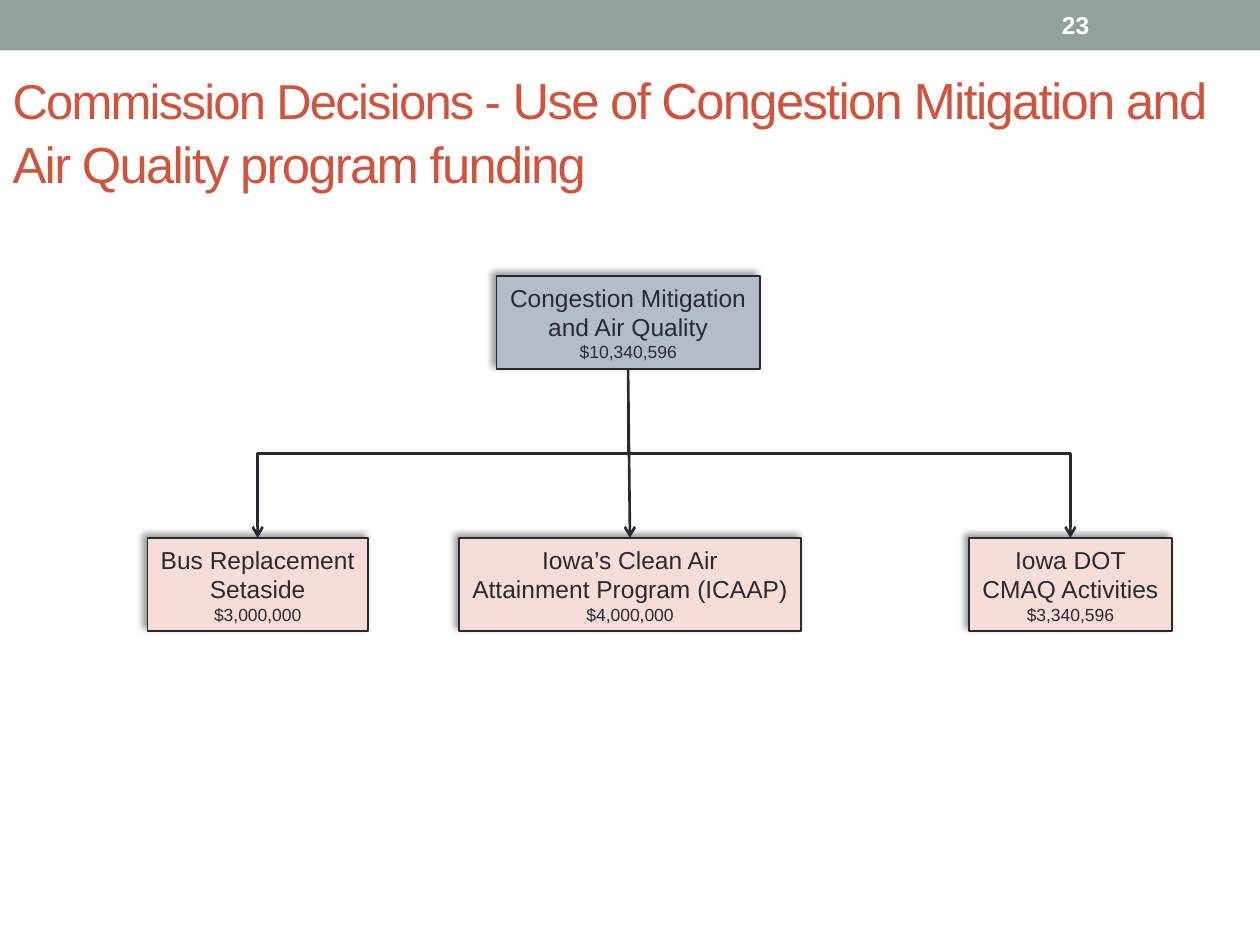
from lxml.etree import SubElement
from pptx import Presentation
from pptx.dml.color import RGBColor
from pptx.enum.shapes import MSO_CONNECTOR as Connector, MSO_SHAPE as Shape
from pptx.enum.text import MSO_ANCHOR as Anchor, MSO_AUTO_SIZE as AutoSize, PP_ALIGN as Align
from pptx.oxml.ns import qn
from pptx.util import Inches, Pt

SAGE = RGBColor(0x93, 0xA2, 0x99)
RUST = RGBColor(0xD2, 0x53, 0x3C)
INK = RGBColor(0x29, 0x29, 0x34)
STEEL = RGBColor(0xB3, 0xBD, 0xC8)
BLUSH = RGBColor(0xF6, 0xDD, 0xD8)
WHITE = RGBColor(0xFF, 0xFF, 0xFF)
FONT = "Arial"
BOX_HEIGHT = 0.74
BOTTOM_SITE, TOP_SITE = 2, 0


def style_font(font, size, color, bold=False):
    font.name, font.size, font.bold = FONT, Pt(size), bold
    font.color.rgb = color


def add_banner(slide, left, top, width, height, number):
    banner = slide.shapes.add_shape(
        Shape.RECTANGLE, Inches(left), Inches(top), Inches(width), Inches(height))
    banner.shadow.inherit = False
    banner.fill.solid()
    banner.fill.fore_color.rgb = SAGE
    banner.line.fill.background()

    number_box = slide.shapes.add_textbox(
        Inches(left + width - 1.67), Inches(top + 0.02), Inches(1.17), Inches(height - 0.04))
    frame = number_box.text_frame
    frame.word_wrap = True
    frame.vertical_anchor = Anchor.MIDDLE
    frame.text = number
    style_font(frame.paragraphs[0].runs[0].font, 14, WHITE, bold=True)


def add_title(slide, left, top, width, height, parts):
    """Fill the title with (text, size) parts."""
    title = slide.shapes.title
    title.left, title.top = Inches(left), Inches(top)
    title.width, title.height = Inches(width), Inches(height)
    frame = title.text_frame
    frame.auto_size = AutoSize.NONE
    frame.vertical_anchor = Anchor.TOP
    paragraph = frame.paragraphs[0]
    paragraph.alignment = Align.LEFT
    paragraph.line_spacing = 1.05
    for text, size in parts:
        run = paragraph.add_run()
        run.text = text
        style_font(run.font, size, RUST)
        run.font._element.set("spc", "-100")


def add_soft_shadow(shape):
    shape.shadow.inherit = False
    effects = shape._element.spPr.find(qn("a:effectLst"))
    shadow = SubElement(effects, qn("a:outerShdw"), blurRad=str(Pt(4)), dist=str(Pt(3)),
                        dir=str(225 * 60000), algn="br", rotWithShape="0")
    color = SubElement(shadow, qn("a:srgbClr"), val="000000")
    SubElement(color, qn("a:alpha"), val="40000")


def add_fund_box(slide, left, top, width, fill, text):
    """Add a box whose last line is the amount, in smaller type."""
    box = slide.shapes.add_shape(
        Shape.RECTANGLE, Inches(left), Inches(top), Inches(width), Inches(BOX_HEIGHT))
    box.fill.solid()
    box.fill.fore_color.rgb = fill
    box.line.color.rgb = INK
    box.line.width = Pt(1)
    add_soft_shadow(box)
    frame = box.text_frame
    frame.word_wrap = False
    frame.auto_size = AutoSize.SHAPE_TO_FIT_TEXT
    frame.text = text
    for paragraph in frame.paragraphs:
        paragraph.alignment = Align.CENTER
        style_font(paragraph.runs[0].font, 14, INK)
    frame.paragraphs[-1].runs[0].font.size = Pt(10)
    return box


def turn_elbow_down(connector):
    """Rotate an elbow so that it leaves and arrives vertically."""
    start_x, end_x = connector.begin_x, connector.end_x
    center_x = (start_x + end_x) // 2
    center_y = (connector.begin_y + connector.end_y) // 2
    drop, reach = connector.height, connector.width
    goes_right = end_x > start_x
    connector.left, connector.top = center_x - drop // 2, center_y - reach // 2
    connector.width, connector.height = drop, reach
    transform = connector._element.spPr.find(qn("a:xfrm"))
    transform.set("rot", str((270 if goes_right else 90) * 60000))
    transform.set("flipH", "1" if goes_right else "0")
    transform.set("flipV", "0")


def add_arrow(slide, kind, parent, child):
    connector = slide.shapes.add_connector(kind, 0, 0, 0, 0)
    connector.begin_connect(parent, BOTTOM_SITE)
    connector.end_connect(child, TOP_SITE)
    if kind == Connector.ELBOW:
        turn_elbow_down(connector)
    connector.line.color.rgb = INK
    connector.line.width = Pt(1.5)
    SubElement(connector.line._get_or_add_ln(), qn("a:tailEnd"), type="arrow")
    SubElement(connector._element.spPr, qn("a:effectLst"))


def add_funding_tree(slide, left, top):
    root = add_fund_box(slide, left + 2.77, top, 2.09, STEEL,
                        "Congestion Mitigation\nand Air Quality\n$10,340,596")
    programs = [
        (0, 1.75, Connector.ELBOW, "Bus Replacement\nSetaside\n$3,000,000"),
        (6.52, 1.61, Connector.ELBOW, "Iowa DOT\nCMAQ Activities\n$3,340,596"),
        (2.47, 2.72, Connector.STRAIGHT,
         "Iowa’s Clean Air\nAttainment Program (ICAAP)\n$4,000,000"),
    ]
    for offset, width, kind, text in programs:
        program = add_fund_box(slide, left + offset, top + 2.08, width, BLUSH, text)
        add_arrow(slide, kind, root, program)


def main():
    presentation = Presentation()
    presentation.slide_width, presentation.slide_height = Inches(10), Inches(7.5)
    slide = presentation.slides.add_slide(presentation.slide_layouts[5])
    add_banner(slide, 0, 0, 10, 0.4, "23")
    add_title(slide, 0, 0.47, 10, 1.25, [
        ("Commission Decisions - ", 28),
        ("Use of Congestion Mitigation and Air Quality program funding", 29),
    ])
    add_funding_tree(slide, 1.17, 2.19)
    presentation.save("out.pptx")


if __name__ == "__main__":
    main()
